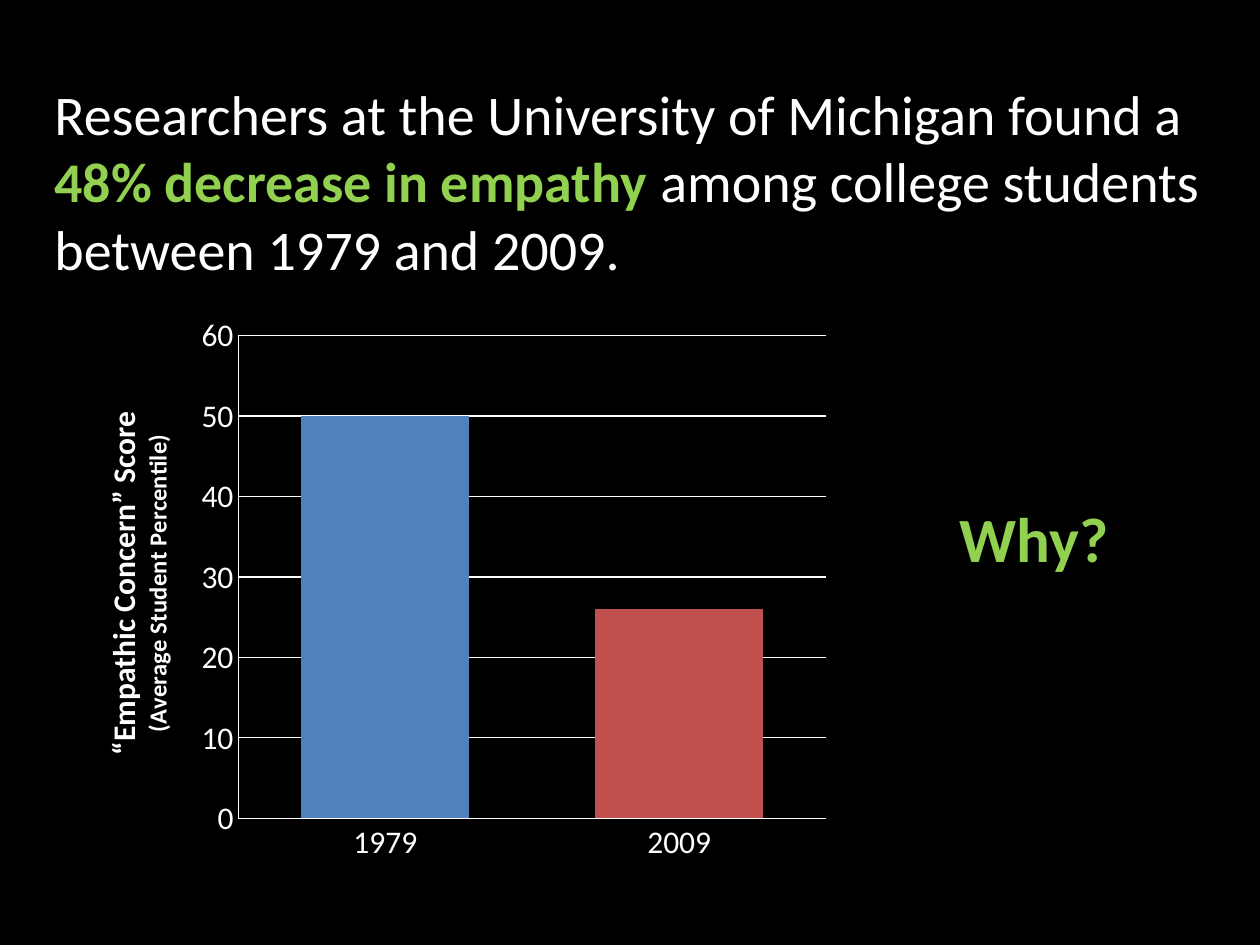
from lxml import etree
from pptx import Presentation
from pptx.chart.data import CategoryChartData
from pptx.dml.color import RGBColor
from pptx.enum.chart import XL_CHART_TYPE as ChartType, XL_TICK_MARK as TickMark
from pptx.enum.text import MSO_AUTO_SIZE as AutoSize, PP_ALIGN as Align
from pptx.oxml.ns import qn
from pptx.util import Pt

BLACK = RGBColor(0x00, 0x00, 0x00)
WHITE = RGBColor(0xFF, 0xFF, 0xFF)
GREEN = RGBColor(0x92, 0xD0, 0x50)
BLUE = RGBColor(0x4F, 0x81, 0xBD)
RED = RGBColor(0xC0, 0x50, 0x4D)
FONT = "Calibri"


def add_text(slide, place, runs, size, align=Align.LEFT):
    """Add a one-paragraph box; runs are (text, colour, bold)."""
    box = slide.shapes.add_textbox(*map(Pt, place))
    frame = box.text_frame
    frame.word_wrap = True
    frame.auto_size = AutoSize.SHAPE_TO_FIT_TEXT
    para = frame.paragraphs[0]
    para.alignment = align
    para.font.name, para.font.size = FONT, Pt(size)
    for text, color, bold in runs:
        span = para.add_run()
        span.text = text
        span.font.color.rgb = color
        span.font.bold = bold


def set_layout(parent, before, **values):
    """Place a chart part by fractions of the chart area."""
    for old in parent.findall(qn("c:layout")):
        parent.remove(old)
    layout = etree.Element(qn("c:layout"))
    manual = etree.SubElement(layout, qn("c:manualLayout"))
    for name, value in values.items():
        etree.SubElement(manual, qn(f"c:{name}")).set("val", str(value))
    parent.insert(before, layout)


deck = Presentation()
deck.slide_width, deck.slide_height = Pt(720), Pt(540)
slide = deck.slides.add_slide(deck.slide_layouts[6])
slide.background.fill.solid()
slide.background.fill.fore_color.rgb = BLACK

# Finding and question
add_text(slide, (24, 42, 672, 124), [
    ("Researchers at the University of Michigan found a ", WHITE, False),
    ("48% decrease in empathy ", GREEN, True),
    ("among college students between 1979 and 2009.", WHITE, False),
], 32)
add_text(slide, (504, 282, 174, 51), [("Why?", GREEN, True)], 36, Align.CENTER)

# Empathy chart
data = CategoryChartData()
data.categories = ["1979", "2009"]
data.add_series("Series 1", (50, 26))
chart = slide.shapes.add_chart(
    ChartType.COLUMN_CLUSTERED, Pt(24), Pt(174), Pt(462), Pt(348), data).chart
chart.has_legend = False
chart.has_title = False
chart.font.name, chart.font.size = FONT, Pt(18)
chart.font.color.rgb = WHITE

# Columns
plot = chart.plots[0]
plot.gap_width = 75
plot.vary_by_categories = False
series = plot.series[0]
for fill, color in ((series.format.fill, BLUE),
                    (series.points[1].format.fill, RED)):
    fill.solid()
    fill.fore_color.rgb = color

# Axes
score_axis = chart.value_axis
score_axis.minimum_scale, score_axis.maximum_scale = 0, 60
score_axis.major_unit = 10
score_axis.has_major_gridlines = True
for axis in (chart.category_axis, score_axis):
    axis.major_tick_mark = axis.minor_tick_mark = TickMark.NONE
for part in (chart.category_axis, score_axis, score_axis.major_gridlines):
    part.format.line.color.rgb = WHITE
    part.format.line.width = Pt(0.75)

# Score axis title
title_frame = score_axis.axis_title.text_frame
title_lines = (("“Empathic Concern” Score", 18), ("(Average Student Percentile)", 14))
for index, (text, size) in enumerate(title_lines):
    para = title_frame.add_paragraph() if index else title_frame.paragraphs[0]
    span = para.add_run()
    span.text = text
    for font in (para.font, span.font):
        font.name, font.size, font.bold = FONT, Pt(size), True
        font.color.rgb = WHITE
body = title_frame._txBody.find(qn("a:bodyPr"))
body.set("rot", "-5400000")
body.set("vert", "horz")

# Positions inside the chart
set_layout(score_axis.axis_title._element, 1,
           xMode="edge", yMode="edge", x=0.07, y=0.17)
set_layout(chart._chartSpace.chart.plotArea, 0, layoutTarget="inner",
           xMode="edge", yMode="edge", x=0.243, y=0.051, w=0.727, h=0.793)

deck.save("out.pptx")
